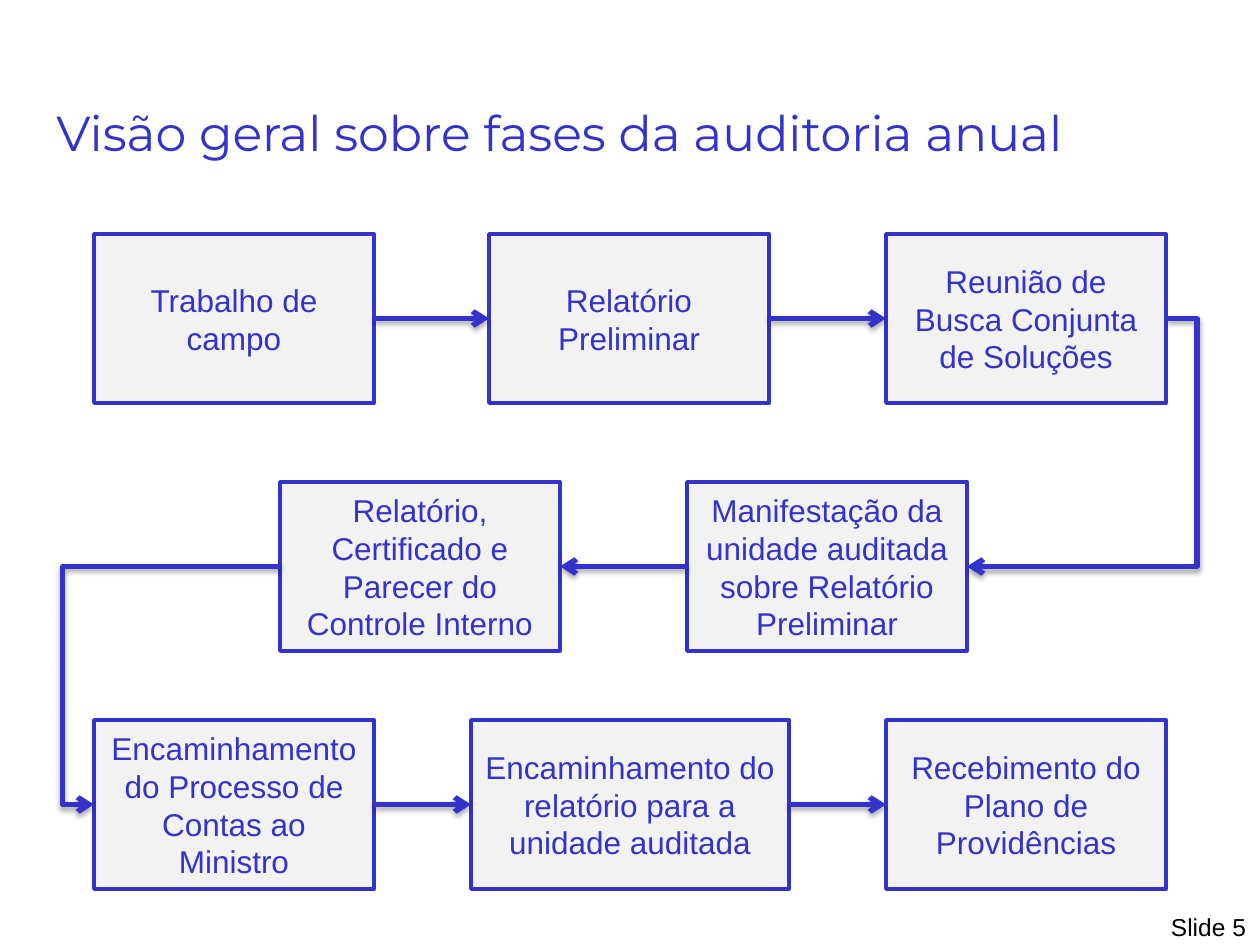
from dataclasses import dataclass

from lxml import etree
from pptx import Presentation
from pptx import util as u
from pptx.dml.color import RGBColor
from pptx.enum import shapes, text
from pptx.oxml import parse_xml
from pptx.oxml.ns import nsdecls, qn

EMU_PER_PX = 914400 / 126
LEFT, RIGHT = 1, 3  # connection sites of a process box


@dataclass(frozen=True)
class Theme:
    blue: RGBColor = RGBColor(0x33, 0x33, 0xCC)
    box_fill: RGBColor = RGBColor(0xF2, 0xF2, 0xF2)
    black: RGBColor = RGBColor(0, 0, 0)
    title_font: str = "Montserrat"
    body_font: str = "Arial"
    title_size: int = 28
    box_size: int = 18
    footer_size: int = 14
    box_line: int = 2
    arrow_line: int = 3


THEME = Theme()

BOX_WIDTH, BOX_HEIGHT = 280, 169
ROW_TOPS = (234, 482, 720)

# Phases in process order: row, left, width, wording
PHASES = (
    (0, 94, BOX_WIDTH, "Trabalho de campo"),
    (0, 489, BOX_WIDTH, "Relatório Preliminar"),
    (0, 886, BOX_WIDTH, "Reunião de Busca Conjunta de Soluções"),
    (1, 687, BOX_WIDTH, "Manifestação da unidade auditada sobre Relatório Preliminar"),
    (1, 280, BOX_WIDTH, "Relatório, Certificado e Parecer do Controle Interno"),
    (2, 94, BOX_WIDTH, "Encaminhamento do Processo de Contas ao Ministro"),
    (2, 471, 318, "Encaminhamento do relatório para a unidade auditada"),
    (2, 886, BOX_WIDTH, "Recebimento do Plano de Providências"),
)

# Arrow from each phase to the next: start site, end site, x of the bend
ARROWS = (
    (RIGHT, LEFT, None),
    (RIGHT, LEFT, None),
    (RIGHT, RIGHT, 1197),
    (LEFT, RIGHT, None),
    (LEFT, LEFT, 63),
    (RIGHT, LEFT, None),
    (RIGHT, LEFT, None),
)

SHADOW = (
    f'<a:effectLst {nsdecls("a")}>'
    '<a:outerShdw blurRad="40000" dist="23000" dir="5400000" rotWithShape="0">'
    '<a:srgbClr val="000000"><a:alpha val="35000"/></a:srgbClr>'
    "</a:outerShdw></a:effectLst>"
)


def px(length):
    return u.Emu(round(length * EMU_PER_PX))


def write(frame, words, font, size, color, alignment):
    frame.word_wrap = True
    paragraph = frame.paragraphs[0]
    paragraph.text = words
    paragraph.alignment = alignment
    paragraph.font.name = font
    paragraph.font.size = u.Pt(size)
    paragraph.font.color.rgb = color


def add_label(slide, bounds, words, font, size, color, alignment):
    label = slide.shapes.add_textbox(*map(px, bounds))
    write(label.text_frame, words, font, size, color, alignment)
    return label


def add_phase(slide, row, left, width, words):
    bounds = map(px, (left, ROW_TOPS[row], width, BOX_HEIGHT))
    shape = slide.shapes.add_shape(shapes.MSO_SHAPE.FLOWCHART_PROCESS, *bounds)
    shape.shadow.inherit = False
    shape.fill.solid()
    shape.fill.fore_color.rgb = THEME.box_fill
    shape.line.color.rgb = THEME.blue
    shape.line.width = u.Pt(THEME.box_line)
    shape.text_frame.vertical_anchor = text.MSO_ANCHOR.MIDDLE
    write(shape.text_frame, words, THEME.body_font, THEME.box_size,
          THEME.blue, text.PP_ALIGN.CENTER)
    return shape


def add_arrow(slide, source, target, start_site, end_site, bend):
    kinds = shapes.MSO_CONNECTOR
    kind = kinds.STRAIGHT if bend is None else kinds.ELBOW
    connector = slide.shapes.add_connector(kind, 0, 0, 0, 0)
    connector.begin_connect(source, start_site)
    connector.end_connect(target, end_site)
    connector.line.color.rgb = THEME.blue
    connector.line.width = u.Pt(THEME.arrow_line)

    # Arrowhead and soft shadow
    properties = connector._element.spPr
    etree.SubElement(properties.find(qn("a:ln")), qn("a:tailEnd"), type="arrow")
    properties.append(parse_xml(SHADOW))

    # Bend position as a share of the horizontal run
    if bend is not None:
        run = connector.end_x - connector.begin_x
        share = round((px(bend) - connector.begin_x) / run * 100000)
        guides = properties.find(qn("a:prstGeom")).find(qn("a:avLst"))
        etree.SubElement(guides, qn("a:gd"), name="adj1", fmla=f"val {share}")


def main():
    presentation = Presentation()
    presentation.slide_width = px(1260)
    presentation.slide_height = px(945)
    slide = presentation.slides.add_slide(presentation.slide_layouts[6])

    # Slide number and title
    footer = add_label(slide, (1013, 905, 247, 44), "Slide 5", THEME.body_font,
                       THEME.footer_size, THEME.black, text.PP_ALIGN.RIGHT)
    footer.text_frame.margin_left = footer.text_frame.margin_right = px(14)
    footer.text_frame.margin_top = footer.text_frame.margin_bottom = px(7)
    add_label(slide, (44, 96, 1171, 99), "Visão geral sobre fases da auditoria anual",
              THEME.title_font, THEME.title_size, THEME.blue, text.PP_ALIGN.LEFT)

    # Flow of phases
    boxes = [add_phase(slide, *phase) for phase in PHASES]
    for source, target, arrow in zip(boxes, boxes[1:], ARROWS):
        add_arrow(slide, source, target, *arrow)

    presentation.save("out.pptx")


if __name__ == "__main__":
    main()
